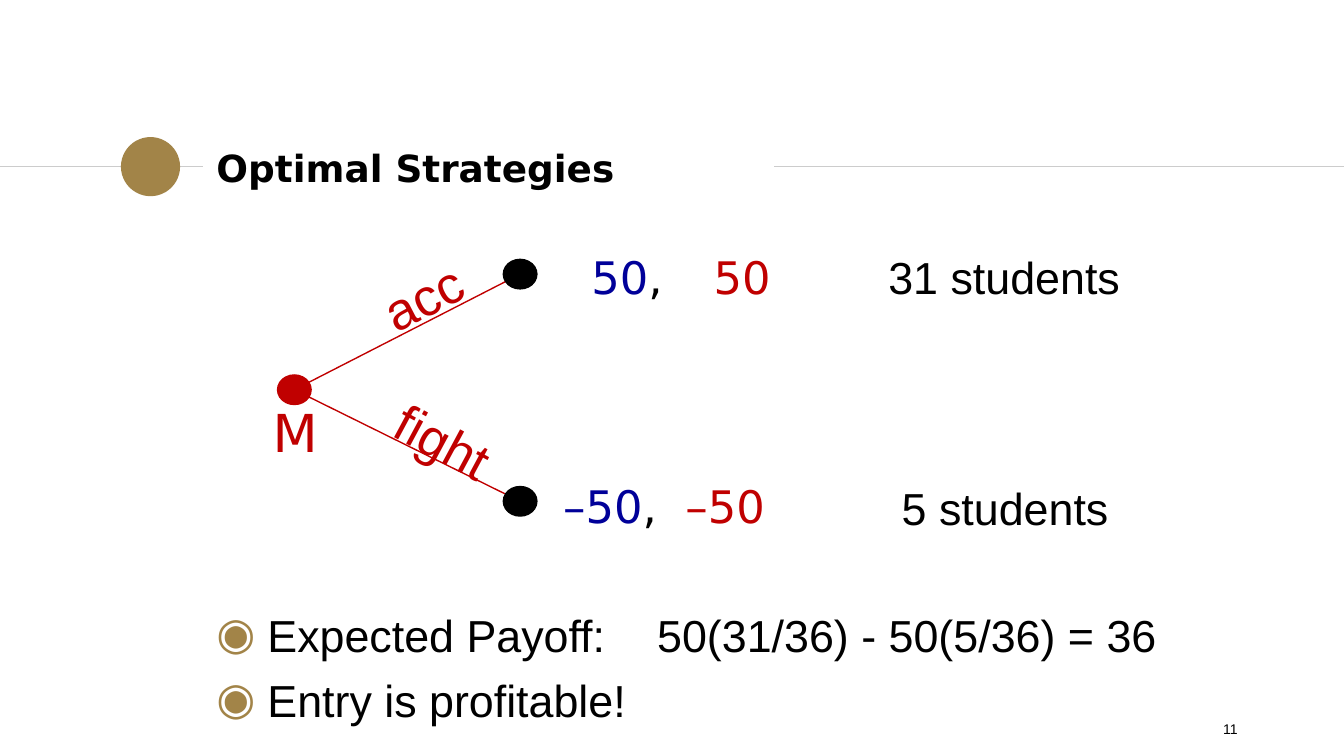
from dataclasses import dataclass
from lxml.etree import SubElement
from pptx import Presentation
from pptx.dml.color import RGBColor
from pptx.enum.shapes import MSO_CONNECTOR, MSO_SHAPE
from pptx.enum.text import MSO_ANCHOR, MSO_AUTO_SIZE, PP_ALIGN
from pptx.oxml.ns import qn
from pptx.util import Inches, Pt

COLORS = {"ink": "000000", "red": "C00000", "blue": "000099",
          "gold": "A28448", "rule": "CCCCCC"}
SANS, WIDE = "Arial", "DejaVu Sans"


@dataclass
class Span:
    text: str
    color: str = "ink"


@dataclass
class Label:
    left: float
    top: float
    width: float
    height: float
    spans: list[Span]
    size: float = 24
    font: str = SANS
    rotation: float = 0
    inset: float = 0
    tab: float = 0
    align: PP_ALIGN = PP_ALIGN.LEFT


@dataclass
class Node:
    x: float
    y: float
    color: str
    outlined: bool = True


def rgb(name: str) -> RGBColor:
    return RGBColor.from_string(COLORS[name])


def set_frame(frame, inset_x: float, inset_y: float, anchor=MSO_ANCHOR.TOP) -> None:
    formats = {
        "word_wrap": True, "auto_size": MSO_AUTO_SIZE.NONE, "vertical_anchor": anchor,
        "margin_left": Inches(inset_x), "margin_right": Inches(inset_x),
        "margin_top": Inches(inset_y), "margin_bottom": Inches(inset_y),
    }
    for name, value in formats.items():
        setattr(frame, name, value)


def add_span(para, span: Span, size: float, font: str, bold: bool = False) -> None:
    run = para.add_run()
    run.text = span.text
    for name, value in {"name": font, "size": Pt(size), "bold": bold}.items():
        setattr(run.font, name, value)
    run.font.color.rgb = rgb(span.color)


def add_tab(para, position: float) -> None:
    stops = SubElement(para._p.get_or_add_pPr(), qn("a:tabLst"))
    SubElement(stops, qn("a:tab"), pos=str(Inches(position)), algn="l")


def add_bullet(para, indent: float) -> None:
    properties = para._p.get_or_add_pPr()
    properties.set("marL", str(Inches(indent)))
    properties.set("indent", str(-Inches(indent)))
    color = SubElement(properties, qn("a:buClr"))
    SubElement(color, qn("a:srgbClr"), val=COLORS["gold"])
    SubElement(properties, qn("a:buFont"), typeface=SANS)
    SubElement(properties, qn("a:buChar"), char="◉")


def add_label(page, label: Label) -> None:
    box = page.shapes.add_textbox(Inches(label.left), Inches(label.top),
                                  Inches(label.width), Inches(label.height))
    box.rotation = label.rotation
    set_frame(box.text_frame, label.inset, label.inset / 2)
    para = box.text_frame.paragraphs[0]
    para.alignment = label.align
    if label.tab:
        add_tab(para, label.tab)
    for span in label.spans:
        add_span(para, span, label.size, label.font)


def add_line(page, start: tuple[float, float], end: tuple[float, float], color: str) -> None:
    line = page.shapes.add_connector(MSO_CONNECTOR.STRAIGHT,
                                     *(Inches(value) for value in (*start, *end)))
    line.line.color.rgb = rgb(color)
    line.line.width = Pt(0.75)
    SubElement(line._element.spPr, qn("a:effectLst"))


def add_ellipse(page, node: Node, width: float, height: float) -> None:
    ellipse = page.shapes.add_shape(
        MSO_SHAPE.OVAL, Inches(node.x - width / 2), Inches(node.y - height / 2),
        Inches(width), Inches(height))
    ellipse.shadow.inherit = False
    ellipse.fill.solid()
    ellipse.fill.fore_color.rgb = rgb(node.color)
    if node.outlined:
        ellipse.line.color.rgb = rgb(node.color)
        ellipse.line.width = Pt(0.75)
    else:
        ellipse.line.fill.background()


def add_title(page, text: str) -> None:
    title = page.shapes.title
    places = {"left": 1.51, "top": 1.01, "width": 4.24, "height": 0.48}
    for name, value in places.items():
        setattr(title, name, Inches(value))
    set_frame(title.text_frame, 0.1, 0.1, MSO_ANCHOR.MIDDLE)
    para = title.text_frame.paragraphs[0]
    para.alignment = PP_ALIGN.LEFT
    add_span(para, Span(text), 20, WIDE, bold=True)


def add_conclusions(page, lines: list[str]) -> None:
    box = page.shapes.add_textbox(Inches(1.61), Inches(4.52), Inches(7.25), Inches(0.9))
    set_frame(box.text_frame, 0, 0)
    for index, text in enumerate(lines):
        para = box.text_frame.paragraphs[0] if index == 0 else box.text_frame.add_paragraph()
        para.space_before = Pt(6 if index else 0)
        add_bullet(para, 0.38)
        if "\t" in text:
            add_tab(para, 3.28)
        add_span(para, Span(text), 24, SANS)


def payoff(left: float, top: float, value: str) -> Label:
    spans = [Span(value, "blue"), Span(",\t"), Span(value, "red")]
    return Label(left, top, 2, 0.41, spans, font=WIDE, tab=0.91)


def main() -> None:
    deck = Presentation()
    deck.slide_width = Inches(10)
    deck.slide_height = deck.slide_width * 9 // 16
    page = deck.slides.add_slide(deck.slide_layouts[5])

    # Heading with its rule and dot
    rule_y = 1.24
    for start, end in ((0, 1.51), (5.76, 10)):
        add_line(page, (start, rule_y), (end, rule_y), "rule")
    add_ellipse(page, Node(1.12, rule_y, "gold", outlined=False), 0.44, 0.44)
    add_title(page, "Optimal Strategies")

    # Decision tree
    root = Node(2.19, 2.9, "red")
    leaves = [Node(3.87, 2.04, "ink"), Node(3.87, 3.73, "ink")]
    for leaf in leaves:
        add_line(page, (root.x, root.y), (leaf.x, leaf.y), "red")
    for node in (root, *leaves):
        add_ellipse(page, node, 0.25, 0.22)

    # Player, moves, payoffs, counts and page number
    labels = [
        Label(1.93, 2.93, 0.59, 0.54, [Span("M", "red")], 28, WIDE, inset=0.1),
        Label(2.73, 1.88, 1, 0.54, [Span("acc", "red")], 28, rotation=332.5, inset=0.1),
        Label(2.83, 3.05, 1.15, 0.54, [Span("fight", "red")], 28, rotation=28.2, inset=0.1),
        payoff(4.4, 1.86, "50"),
        payoff(4.19, 3.56, "–50"),
        Label(6.61, 1.86, 2.2, 0.4, [Span("31 students")]),
        Label(6.71, 3.58, 2.2, 0.4, [Span("5 students")]),
        Label(7.06, 5.36, 2.15, 0.15, [Span("11")], 7.5, align=PP_ALIGN.RIGHT),
    ]
    for label in labels:
        add_label(page, label)

    # Conclusions
    add_conclusions(page, ["Expected Payoff:\t50(31/36) - 50(5/36) = 36",
                           "Entry is profitable!"])
    deck.save("out.pptx")


if __name__ == "__main__":
    main()
